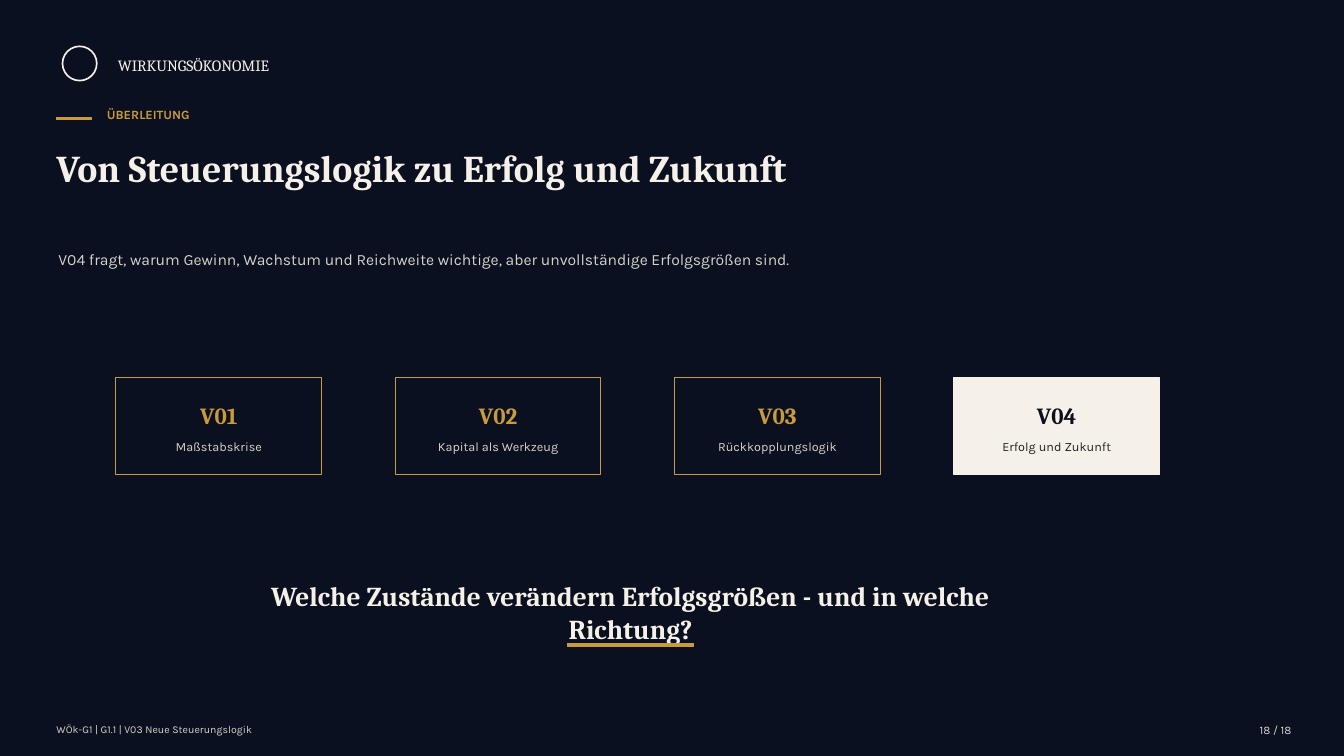
import pptx
import pptx.util
import pptx.dml.color
import pptx.enum.shapes
import pptx.enum.text

WIDTH, HEIGHT = 13.33, 7.5
MARGIN = 0.56
SERIF, SANS = "Cambria", "Karla"
COLORS = {
    "night": "0B1020",
    "cream": "F6F1E8",
    "gold": "C89B3C",
    "sand": "D7D3CA",
    "ink": "222222",
}
ALIGN = pptx.enum.text.PP_ALIGN
SHAPE = pptx.enum.shapes.MSO_SHAPE
STEPS = [
    ("V01", "Maßstabskrise"),
    ("V02", "Kapital als Werkzeug"),
    ("V03", "Rückkopplungslogik"),
    ("V04", "Erfolg und Zukunft"),
]


def rgb(color):
    return pptx.dml.color.RGBColor.from_string(COLORS[color])


def inches(box):
    return [pptx.util.Inches(length) for length in box]


def write(holder, text, size, color, font=SANS, bold=False, align=ALIGN.LEFT):
    frame = holder.text_frame
    frame.text = text
    frame.word_wrap = True
    frame.auto_size = pptx.enum.text.MSO_AUTO_SIZE.NONE
    frame.vertical_anchor = pptx.enum.text.MSO_ANCHOR.TOP
    frame.margin_left = frame.margin_right = 0
    frame.margin_top = frame.margin_bottom = 0
    paragraph = frame.paragraphs[0]
    paragraph.alignment = align
    run_font = paragraph.runs[0].font
    run_font.name, run_font.size, run_font.bold = font, pptx.util.Pt(size), bold
    run_font.color.rgb = rgb(color)


def add_text(slide, box, *args, **style):
    write(slide.shapes.add_textbox(*inches(box)), *args, **style)


def add_figure(slide, kind, box, fill, line, line_width):
    figure = slide.shapes.add_shape(kind, *inches(box))
    figure.shadow.inherit = False
    if fill:
        figure.fill.solid()
        figure.fill.fore_color.rgb = rgb(fill)
    else:
        figure.fill.background()
    figure.line.color.rgb = rgb(line)
    figure.line.width = pptx.util.Pt(line_width)


def add_header(slide, left, top, width):
    # Plain emblem and series name
    add_figure(slide, SHAPE.OVAL, (left + 0.06, top, 0.34, 0.34), None, "cream", 1.2)
    add_text(slide, (left + 0.61, top + 0.09, 2.6, 0.23),
             "WIRKUNGSÖKONOMIE", 11.2, "cream", font=SERIF)
    # Section label with its gold bar
    add_figure(slide, SHAPE.RECTANGLE, (left, top + 0.71, 0.35, 0.02), "gold", "gold", 0)
    add_text(slide, (left + 0.5, top + 0.6, 4.79, 0.25),
             "ÜBERLEITUNG", 9, "gold", bold=True)
    # Title and lead sentence
    title = slide.shapes.title
    title.left, title.top, title.width, title.height = inches(
        (left, top + 0.98, width, 0.94))
    write(title, "Von Steuerungslogik zu Erfolg und Zukunft", 27, "cream",
          font=SERIF, bold=True)
    add_text(slide, (left + 0.02, top + 2.02, 8.75, 0.44),
             "V04 fragt, warum Gewinn, Wachstum und Reichweite wichtige, "
             "aber unvollständige Erfolgsgrößen sind.", 11.2, "sand")


def add_steps(slide, left, top, pitch, width, height):
    inset = 0.185
    for column, (code, topic) in enumerate(STEPS):
        x = left + column * pitch
        current = column == len(STEPS) - 1
        fill, line = ("cream", "cream") if current else (None, "gold")
        add_figure(slide, SHAPE.RECTANGLE, (x, top, width, height), fill, line, 0.75)
        add_text(slide, (x + inset, top + 0.23, width - 2 * inset, 0.25), code, 16.5,
                 "night" if current else "gold", font=SERIF, bold=True,
                 align=ALIGN.CENTER)
        add_text(slide, (x + inset, top + 0.6, width - 2 * inset, 0.19), topic, 9,
                 "ink" if current else "sand", align=ALIGN.CENTER)


def add_question(slide, left, top, width):
    add_text(slide, (left, top, width, 0.35),
             "Welche Zustände verändern Erfolgsgrößen - und in welche Richtung?",
             19.5, "cream", font=SERIF, bold=True, align=ALIGN.CENTER)
    bar = 1.25
    add_figure(slide, SHAPE.RECTANGLE,
               (left + (width - bar) / 2, top + 0.63, bar, 0.03), "gold", "gold", 0)


def add_footer(slide, left, top, right):
    add_text(slide, (left, top, 5.83, 0.19),
             "WÖk-G1 | G1.1 | V03 Neue Steuerungslogik", 7.5, "sand")
    add_text(slide, (right - 0.73, top, 0.73, 0.19), "18 / 18", 8.2, "sand",
             align=ALIGN.RIGHT)


def main():
    deck = pptx.Presentation()
    deck.slide_width, deck.slide_height = inches((WIDTH, HEIGHT))
    slide = deck.slides.add_slide(deck.slide_layouts[5])
    slide.background.fill.solid()
    slide.background.fill.fore_color.rgb = rgb("night")

    add_header(slide, MARGIN, 0.46, 9.69)
    add_steps(slide, 1.15, HEIGHT / 2, 2.77, 2.04, 0.96)
    add_question(slide, 2.65, 5.75, 7.21)
    add_footer(slide, MARGIN, 7.17, 12.81)
    deck.save("out.pptx")


if __name__ == "__main__":
    main()
